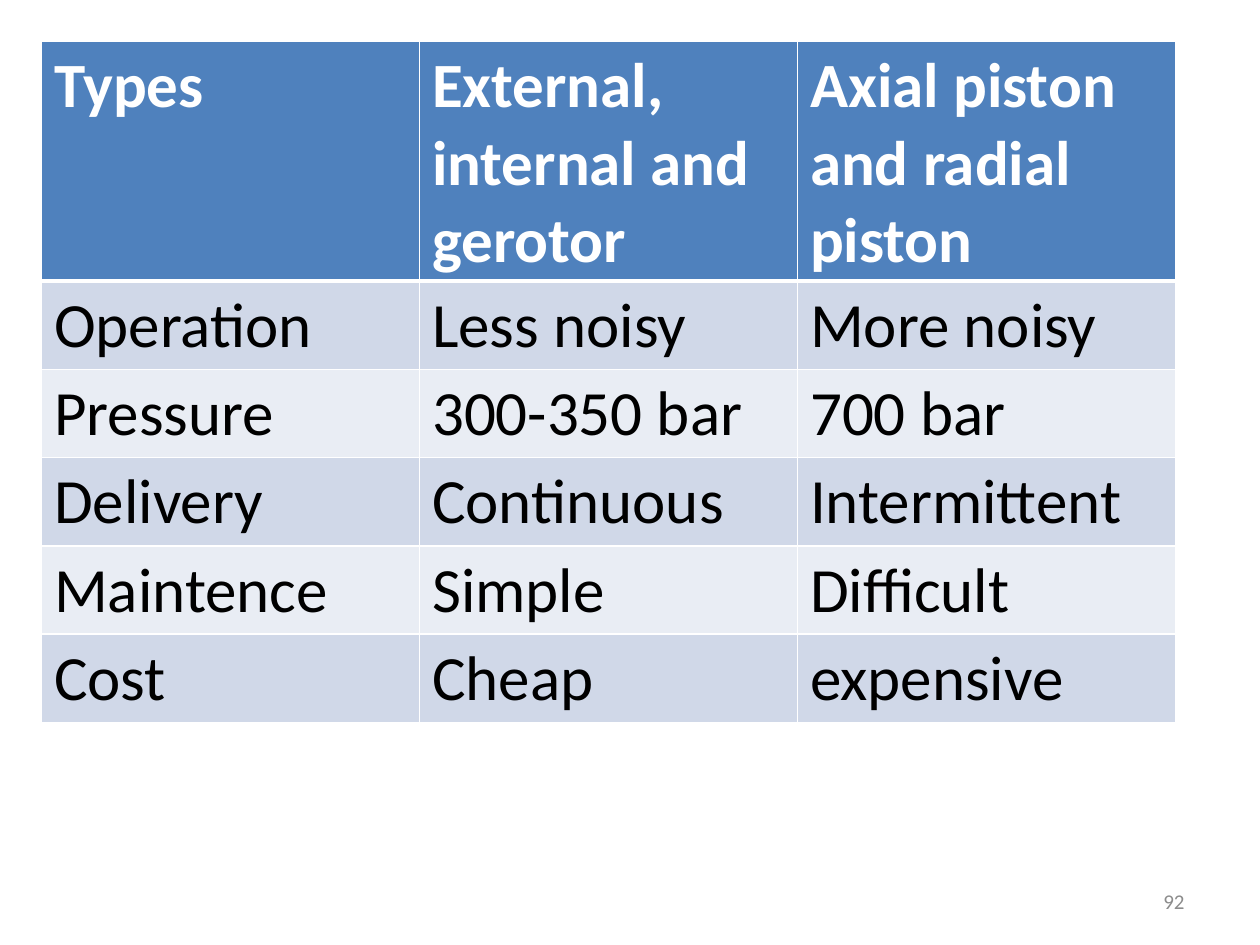
from dataclasses import dataclass

from lxml.etree import SubElement
from pptx import Presentation
from pptx.dml.color import RGBColor
from pptx.enum.text import MSO_ANCHOR, PP_ALIGN
from pptx.oxml.ns import qn
from pptx.util import Inches, Pt


@dataclass(frozen=True)
class Theme:
    font: str = "Calibri"
    table_size: int = 36
    number_size: int = 12
    header_fill: str = "4F81BD"
    band_fills: tuple = ("D0D8E8", "E9EDF4")
    header_text: str = "FFFFFF"
    body_text: str = "000000"
    number_text: str = "8C8C8C"
    border: str = "FFFFFF"
    border_width: int = 1
    header_rule_width: int = 3


PUMP_COMPARISON = [
    ("Types", "External, internal and gerotor", "Axial piston and radial piston"),
    ("Operation", "Less noisy", "More noisy"),
    ("Pressure", "300-350 bar", "700 bar"),
    ("Delivery", "Continuous", "Intermittent"),
    ("Maintence", "Simple", "Difficult"),
    ("Cost", "Cheap", "expensive"),
]


class SlideBuilder:
    def __init__(self, slide, theme):
        self.slide = slide
        self.theme = theme

    def add_text(self, text_frame, text, size, color, bold=False, alignment=PP_ALIGN.LEFT):
        paragraph = text_frame.paragraphs[0]
        paragraph.alignment = alignment
        run = paragraph.add_run()
        run.text = text
        font_format = {"name": self.theme.font, "size": Pt(size), "bold": bold}
        for name, value in font_format.items():
            setattr(run.font, name, value)
        run.font.color.rgb = RGBColor.from_string(color)

    def add_page_number(self, text, left, top, width, height):
        shape = self.slide.shapes.add_textbox(
            Inches(left), Inches(top), Inches(width), Inches(height)
        )
        frame_format = {"word_wrap": True, "vertical_anchor": MSO_ANCHOR.MIDDLE}
        for name, value in frame_format.items():
            setattr(shape.text_frame, name, value)
        self.add_text(
            shape.text_frame, text, self.theme.number_size,
            self.theme.number_text, alignment=PP_ALIGN.RIGHT,
        )

    def set_borders(self, cell, widths):
        properties = cell._tc.get_or_add_tcPr()
        for position, (side, width) in enumerate(widths.items()):
            line = SubElement(properties, qn(f"a:{side}"), w=str(Pt(width)))
            fill = SubElement(line, qn("a:solidFill"))
            SubElement(fill, qn("a:srgbClr"), val=self.theme.border)
            properties.insert(position, line)

    def add_table(self, rows, left, top, column_width, header_height, row_height):
        theme = self.theme
        column_count = len(rows[0])
        height = header_height + row_height * (len(rows) - 1)
        table = self.slide.shapes.add_table(
            len(rows), column_count, Inches(left), Inches(top),
            Inches(column_width * column_count), Inches(height),
        ).table
        for column in table.columns:
            column.width = Inches(column_width)
        for row_index, values in enumerate(rows):
            is_header = row_index == 0
            table.rows[row_index].height = Inches(header_height if is_header else row_height)
            fill = theme.header_fill if is_header else theme.band_fills[(row_index - 1) % 2]
            color = theme.header_text if is_header else theme.body_text
            widths = dict.fromkeys(("lnL", "lnR", "lnT", "lnB"), theme.border_width)
            if is_header:
                widths["lnB"] = theme.header_rule_width
            elif row_index == 1:
                widths["lnT"] = theme.header_rule_width
            for column_index, value in enumerate(values):
                cell = table.cell(row_index, column_index)
                cell.fill.solid()
                cell.fill.fore_color.rgb = RGBColor.from_string(fill)
                self.add_text(cell.text_frame, value, theme.table_size, color, is_header)
                self.set_borders(cell, widths)


def main():
    presentation = Presentation()
    presentation.slide_width = Inches(10)
    presentation.slide_height = Inches(7.5)
    slide = presentation.slides.add_slide(presentation.slide_layouts[6])
    builder = SlideBuilder(slide, Theme())
    builder.add_page_number("92", 7.17, 6.95, 2.33, 0.4)
    builder.add_table(
        PUMP_COMPARISON, 0.33, 0.33, column_width=3, header_height=1.9, row_height=0.7
    )
    presentation.save("out.pptx")


if __name__ == "__main__":
    main()
